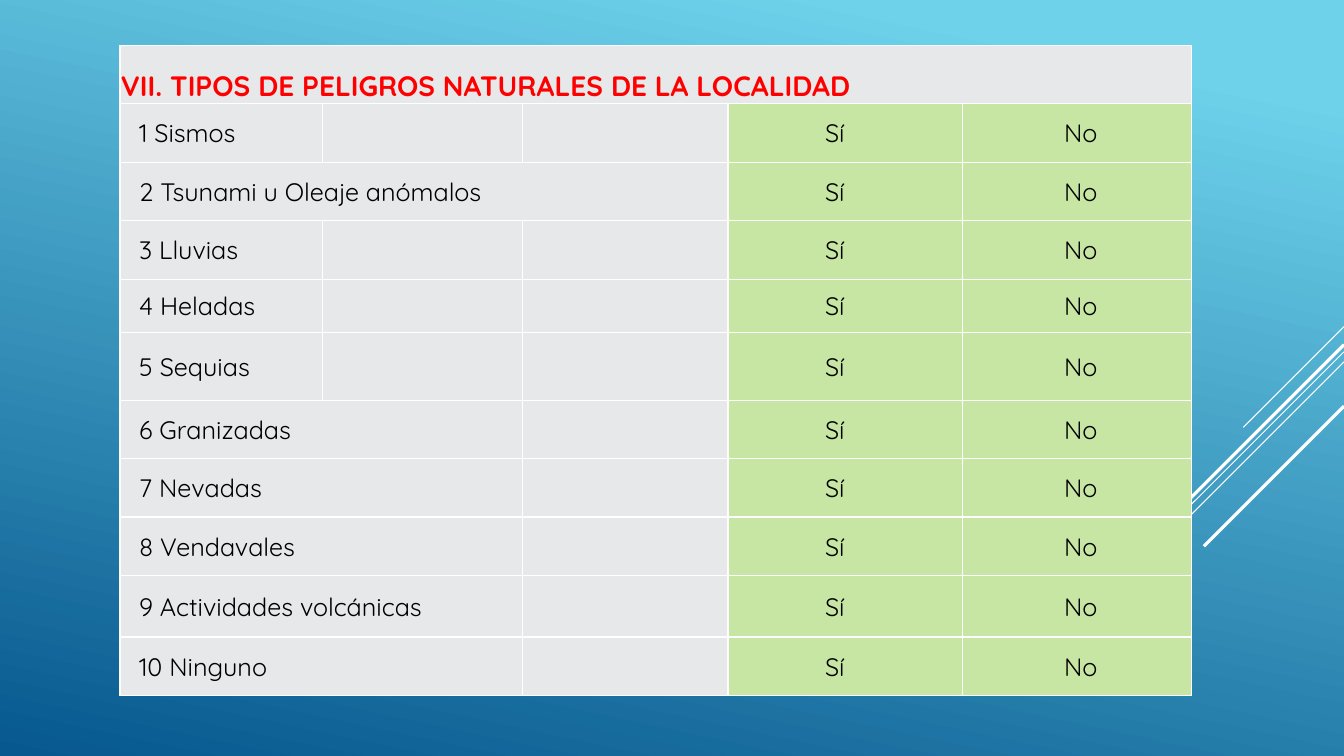
"""Build the slide listing the natural hazards of the locality."""
import lxml.etree
import pptx
import pptx.dml.color
import pptx.enum.shapes
import pptx.enum.text
import pptx.oxml
import pptx.oxml.ns
import pptx.util

Inches = pptx.util.Inches
Pt = pptx.util.Pt
RGBColor = pptx.dml.color.RGBColor
ANCHOR = pptx.enum.text.MSO_ANCHOR
ALIGN = pptx.enum.text.PP_ALIGN
qn = pptx.oxml.ns.qn

SKY = RGBColor(0x6E, 0xD2, 0xEB)
DEEP_BLUE = RGBColor(0x06, 0x58, 0x8E)
WHITE = RGBColor(0xFF, 0xFF, 0xFF)
BLACK = RGBColor(0, 0, 0)
RED = RGBColor(0xFF, 0, 0)
GREY = RGBColor(0xE7, 0xE8, 0xEA)
GREEN = RGBColor(0xC7, 0xE6, 0xA4)

FONT = "Quicksand"
SLIDE_WIDTH = 13.33
HEADING = "VII. TIPOS DE PELIGROS NATURALES DE LA LOCALIDAD"
HAZARDS = [
    ("1 Sismos", 1, 0.58),
    ("2 Tsunami u Oleaje anómalos", 3, 0.58),
    ("3 Lluvias", 1, 0.58),
    ("4 Heladas", 1, 0.53),
    ("5 Sequias", 1, 0.67),
    ("6 Granizadas", 2, 0.58),
    ("7 Nevadas", 2, 0.58),
    ("8 Vendavales", 2, 0.58),
    ("9 Actividades volcánicas", 2, 0.61),
    ("10 Ninguno", 2, 0.58),
]
COLUMN_WIDTHS = [2.01, 1.98, 2.04, 2.33, 2.27]
ROW_HEIGHTS = [0.58] + [height for _, _, height in HAZARDS]
STREAKS = [(3.24, 1, 0.75), (3.49, 3.26, 0.75), (3.59, 2.07, 0.75),
           (3.42, 1.91, 2.25), (4.03, 1.39, 2.25)]


def write(cell, text, left=0.01, right=0.01, align=ALIGN.LEFT,
          anchor=ANCHOR.MIDDLE, size=18, color=BLACK, bold=False):
    """Put one formatted run into a table cell."""
    cell.margin_left, cell.margin_right = Inches(left), Inches(right)
    cell.margin_top, cell.margin_bottom = Inches(0.01), 0
    cell.vertical_anchor = anchor
    paragraph = cell.text_frame.paragraphs[0]
    paragraph.alignment = align
    run = paragraph.add_run()
    run.text = text
    run.font.name, run.font.size = FONT, Pt(size)
    run.font.bold = bold
    run.font.color.rgb = color


def add_borders(cell):
    """Draw a thin white line on every side of a table cell."""
    properties = cell._tc.get_or_add_tcPr()
    for position, side in enumerate(("lnL", "lnR", "lnT", "lnB")):
        border = pptx.oxml.parse_xml(
            f'<a:{side} xmlns:a="http://schemas.openxmlformats.org/drawingml/2006/main"'
            f' w="12700"><a:solidFill><a:srgbClr val="{WHITE}"/></a:solidFill></a:{side}>')
        properties.insert(position, border)


presentation = pptx.Presentation()
presentation.slide_width = Inches(SLIDE_WIDTH)
presentation.slide_height = Inches(7.5)
slide = presentation.slides.add_slide(presentation.slide_layouts[6])

backdrop = slide.background.fill
backdrop.gradient()
backdrop.gradient_angle = 360 - 102
for stop, color, position in zip(backdrop.gradient_stops, (SKY, DEEP_BLUE), (0.1, 1)):
    stop.color.rgb = color
    stop.position = position

for top, reach, weight in STREAKS:
    streak = slide.shapes.add_connector(
        pptx.enum.shapes.MSO_CONNECTOR.STRAIGHT, Inches(SLIDE_WIDTH), Inches(top),
        Inches(SLIDE_WIDTH - reach), Inches(top + reach))
    streak.line.color.rgb = WHITE
    streak.line.width = Pt(weight)
    lxml.etree.SubElement(streak._element.spPr, qn("a:effectLst"))

hazards = slide.shapes.add_table(
    len(ROW_HEIGHTS), len(COLUMN_WIDTHS), Inches(1.19), Inches(0.45),
    Inches(sum(COLUMN_WIDTHS)), Inches(sum(ROW_HEIGHTS))).table
hazards.first_row = hazards.horz_banding = False
for column, width in zip(hazards.columns, COLUMN_WIDTHS):
    column.width = Inches(width)
for row, height in zip(hazards.rows, ROW_HEIGHTS):
    row.height = Inches(height)

for row_index in range(len(ROW_HEIGHTS)):
    for column_index in range(len(COLUMN_WIDTHS)):
        cell = hazards.cell(row_index, column_index)
        cell.fill.solid()
        cell.fill.fore_color.rgb = GREEN if row_index and column_index >= 3 else GREY
        add_borders(cell)

hazards.cell(0, 0).merge(hazards.cell(0, 4))
write(hazards.cell(0, 0), HEADING, anchor=ANCHOR.BOTTOM, size=20, color=RED, bold=True)

for row_index, (hazard, span, _) in enumerate(HAZARDS, start=1):
    if span > 1:
        hazards.cell(row_index, 0).merge(hazards.cell(row_index, span - 1))
    write(hazards.cell(row_index, 0), hazard, left=0.19)
    write(hazards.cell(row_index, 3), "Sí", right=0.22, align=ALIGN.CENTER)
    write(hazards.cell(row_index, 4), "No", left=0.08, align=ALIGN.CENTER)

presentation.save("out.pptx")
